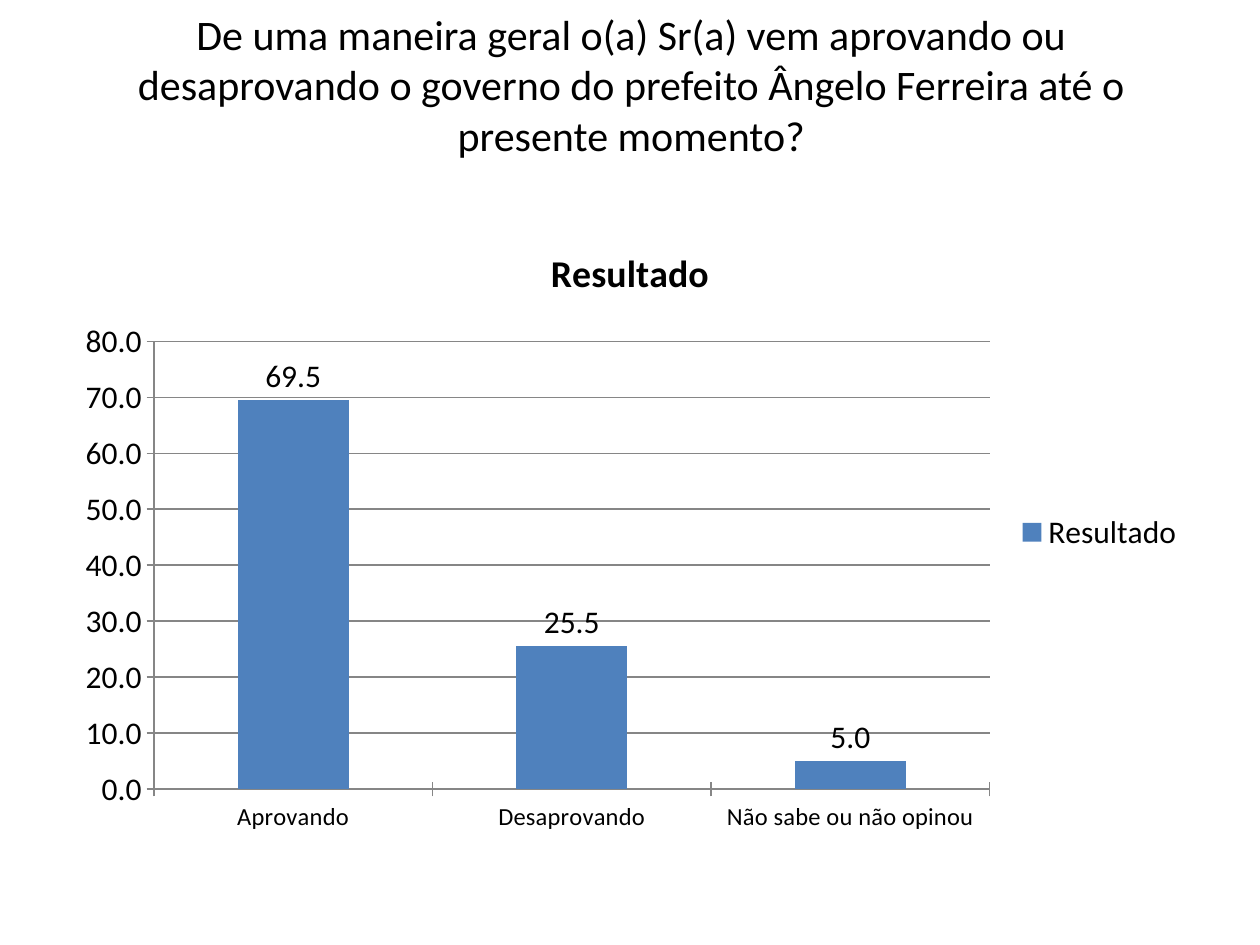
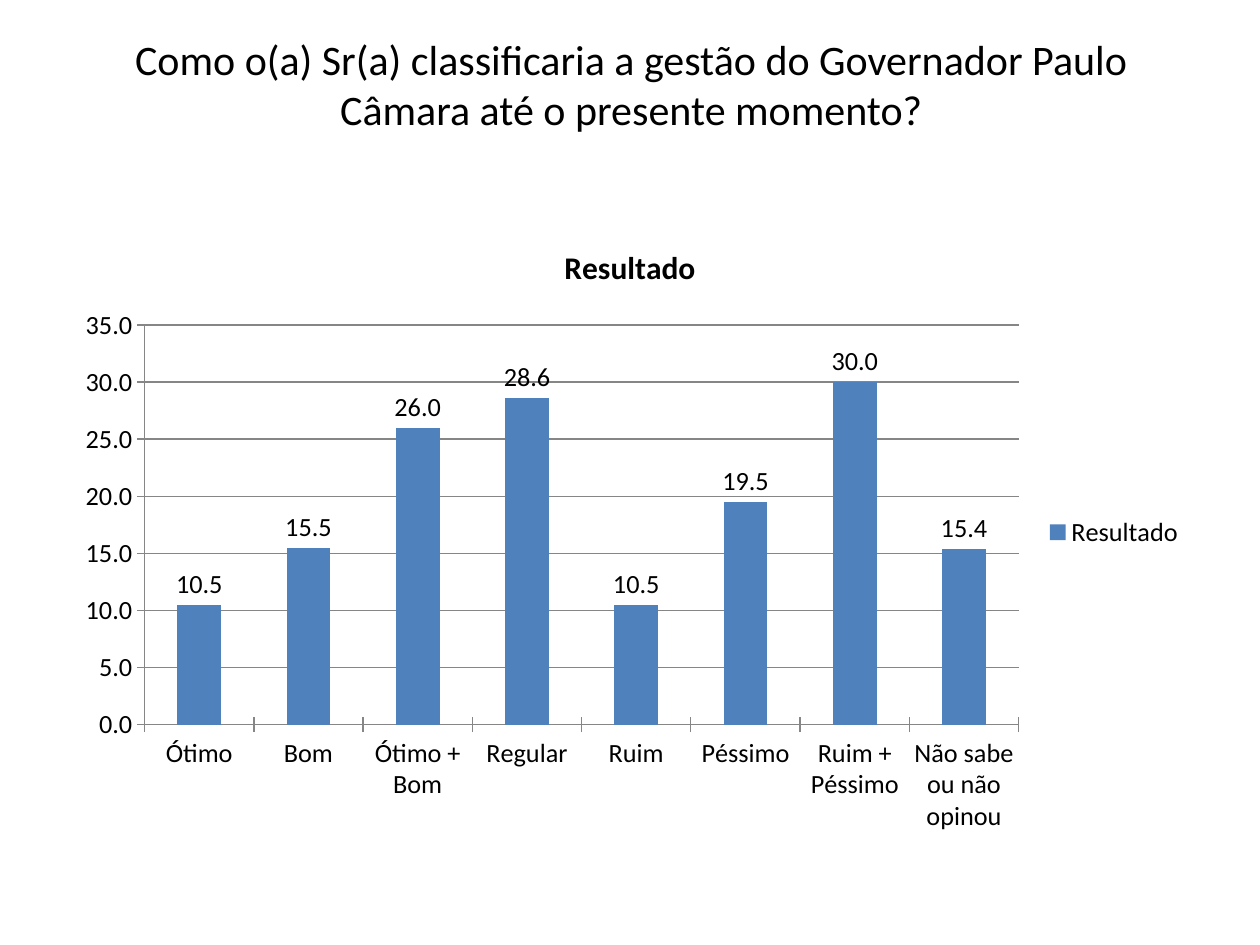
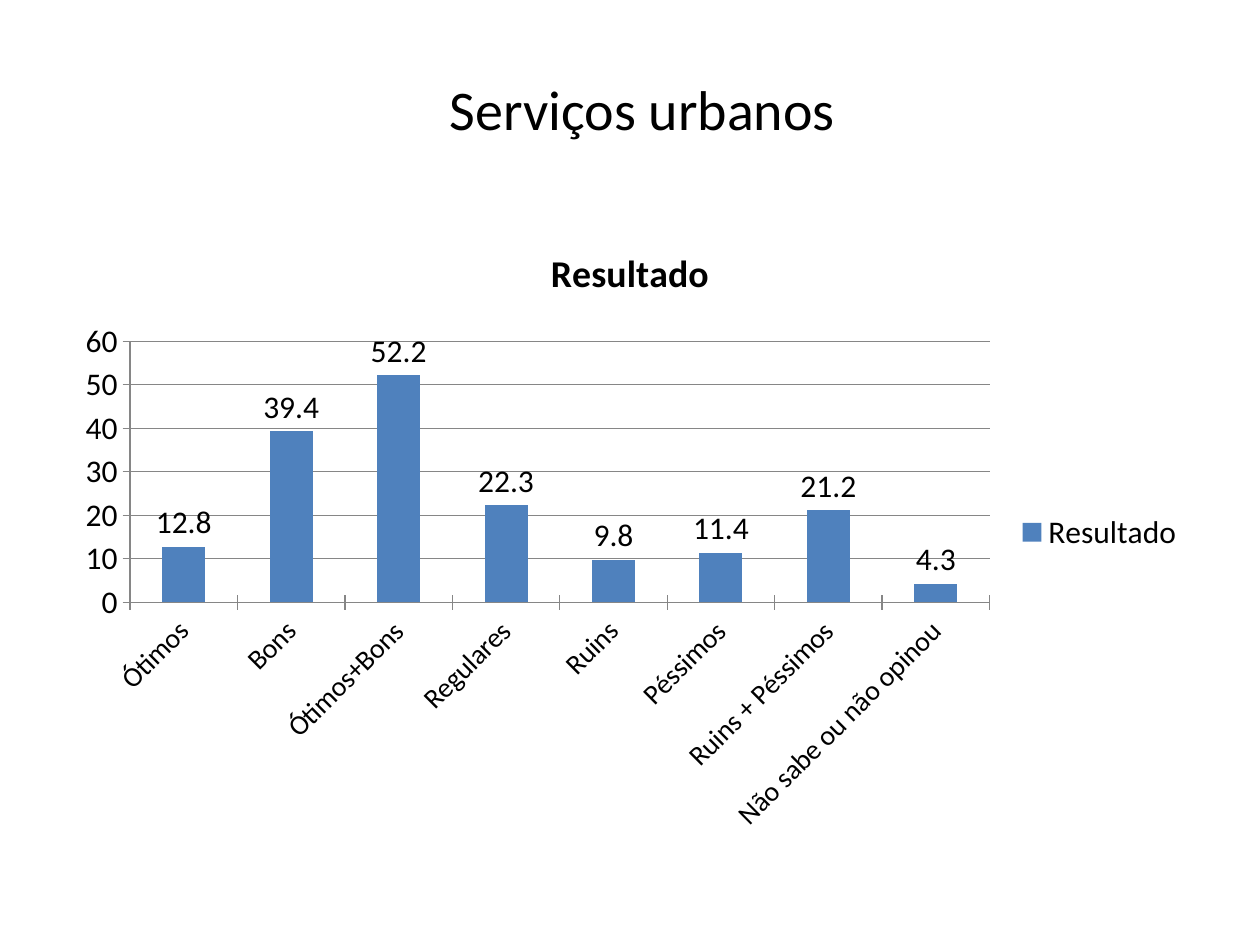
from pptx import Presentation
from pptx.chart.data import CategoryChartData
from pptx.dml.color import RGBColor
from pptx.enum.chart import XL_CHART_TYPE, XL_LABEL_POSITION, XL_LEGEND_POSITION, XL_TICK_MARK
from pptx.enum.text import MSO_ANCHOR, MSO_AUTO_SIZE, PP_ALIGN
from pptx.util import Inches, Pt

FONT = "Calibri"
COLORS = {"text": "000000", "bar": "4F81BD", "line": "868686"}
SERIES = "Resultado"
NO_OPINION = "Não sabe ou não opinou"
QUESTION_BOX = (0.47, 0, 9.08, 1.33)
TOPIC_BOX = (0.55, 0.23, 9, 1.25)
CHART_BOX = (0.5, 1.75, 9, 4.95)

SURVEY = [
    {
        "question": "De uma maneira geral o(a) Sr(a) vem aprovando ou desaprovando o governo "
                    "do prefeito Ângelo Ferreira até o presente momento?",
        "box": QUESTION_BOX, "question_size": 24,
        "chart_size": 18, "category_size": 14, "format": "0.0",
        "answers": {"Aprovando": 69.5, "Desaprovando": 25.5, NO_OPINION: 5},
    },
    {
        "question": "Como o(a) Sr(a) classificaria a gestão do Governador Paulo Câmara "
                    "até o presente momento?",
        "box": QUESTION_BOX, "question_size": 24,
        "chart_size": 15, "category_size": 15, "format": "0.0",
        "answers": {"Ótimo": 10.5, "Bom": 15.5, "Ótimo + Bom": 26, "Regular": 28.6,
                    "Ruim": 10.5, "Péssimo": 19.5, "Ruim + Péssimo": 30, NO_OPINION: 15.4},
    },
    {
        "question": " Serviços urbanos",
        "box": TOPIC_BOX, "question_size": 32,
        "chart_size": 18, "category_size": 16, "format": "General",
        "answers": {"Ótimos": 12.8, "Bons": 39.4, "Ótimos+Bons": 52.2, "Regulares": 22.3,
                    "Ruins": 9.8, "Péssimos": 11.4, "Ruins + Péssimos": 21.2, NO_OPINION: 4.3},
    },
]


def color(role):
    return RGBColor.from_string(COLORS[role])


def style_font(font, size, bold=False):
    font.name, font.size, font.bold = FONT, Pt(size), bold
    font.color.rgb = color("text")


def add_question(slide, topic):
    question = slide.shapes.title
    question.left, question.top, question.width, question.height = map(Inches, topic["box"])
    frame = question.text_frame
    frame.text = topic["question"]
    frame.word_wrap = True
    frame.auto_size = MSO_AUTO_SIZE.NONE
    frame.vertical_anchor = MSO_ANCHOR.MIDDLE
    paragraph = frame.paragraphs[0]
    paragraph.alignment = PP_ALIGN.CENTER
    style_font(paragraph.runs[0].font, topic["question_size"])


def style_line(line):
    line.color.rgb = color("line")
    line.width = Pt(0.75)


def add_results(slide, topic):
    results = CategoryChartData(number_format=topic["format"])
    results.categories = list(topic["answers"])
    results.add_series(SERIES, list(topic["answers"].values()))
    chart = slide.shapes.add_chart(
        XL_CHART_TYPE.COLUMN_CLUSTERED, *map(Inches, CHART_BOX), results).chart
    size = topic["chart_size"]
    style_font(chart.font, size)

    chart.has_title = True
    heading = chart.chart_title
    heading.include_in_layout = False
    heading.text_frame.text = SERIES
    style_font(heading.text_frame.paragraphs[0].runs[0].font, size * 1.2, bold=True)

    chart.has_legend = True
    chart.legend.position = XL_LEGEND_POSITION.RIGHT
    chart.legend.include_in_layout = False

    for axis in (chart.category_axis, chart.value_axis):
        axis.major_tick_mark = XL_TICK_MARK.CROSS
        style_line(axis.format.line)
    style_font(chart.category_axis.tick_labels.font, topic["category_size"])
    values = chart.value_axis
    values.has_major_gridlines = True
    style_line(values.major_gridlines.format.line)
    values.tick_labels.number_format = topic["format"]
    values.tick_labels.number_format_is_linked = False

    plot = chart.plots[0]
    plot.vary_by_categories = False
    plot.gap_width = 150
    bars = plot.series[0]
    bars.format.fill.solid()
    bars.format.fill.fore_color.rgb = color("bar")
    labels = bars.data_labels
    labels.show_value = True
    labels.position = XL_LABEL_POSITION.OUTSIDE_END
    labels.number_format = topic["format"]
    labels.number_format_is_linked = False


def main():
    """Build one slide per survey topic, each with its column chart."""
    deck = Presentation()
    deck.slide_width, deck.slide_height = Inches(10), Inches(7.5)
    title_only = deck.slide_layouts.get_by_name("Title Only")
    for topic in SURVEY:
        slide = deck.slides.add_slide(title_only)
        add_question(slide, topic)
        add_results(slide, topic)
    deck.save("out.pptx")


if __name__ == "__main__":
    main()
